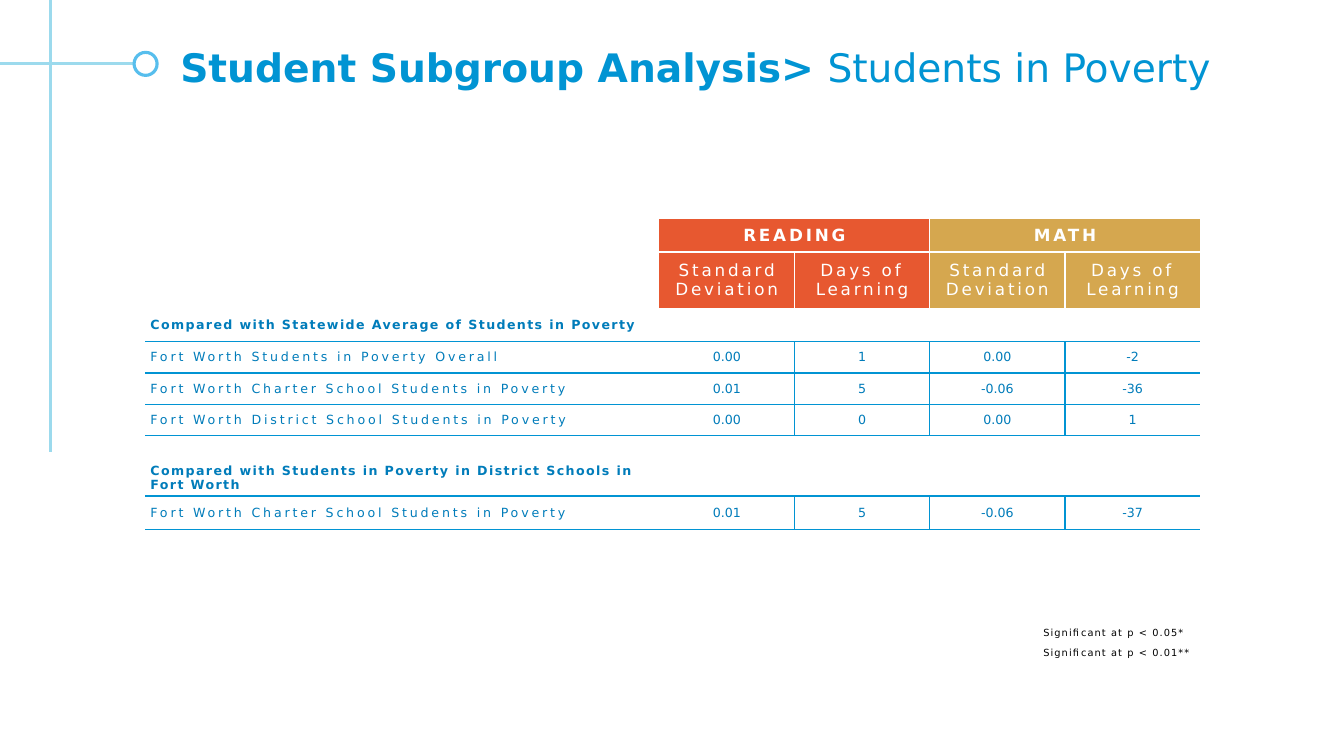
import pptx
import pptx.dml.color
import pptx.enum.shapes
import pptx.enum.text
import pptx.oxml
import pptx.oxml.ns
import pptx.util

Cm, Pt = pptx.util.Cm, pptx.util.Pt
rgb = pptx.dml.color.RGBColor.from_string
ALIGN = pptx.enum.text.PP_ALIGN
ANCHOR = pptx.enum.text.MSO_ANCHOR
NS = pptx.oxml.ns.nsdecls("a")
BLUE, TEXT_BLUE, WHITE = "0194D3", "007CBA", "FFFFFF"
RED, GOLD = "E75830", "D5A74F"


def add_run(p, text, size, color, bold=False, spacing=0):
    r = p.add_run()
    r.text = text
    style = {"name": "DejaVu Sans", "size": Pt(size), "bold": bold}
    for name, value in style.items():
        setattr(r.font, name, value)
    r.font.color.rgb = rgb(color)
    r._r.get_or_add_rPr().set("spc", str(int(spacing * 100)))


def set_cell(cell, text, sides, line, fill=None, align=ALIGN.LEFT,
             anchor=ANCHOR.MIDDLE, margins=(0.13, 0.08), **font):
    """Write text, borders on the given sides (of "LRTB") and fill of a cell."""
    side, edge = (Cm(m) for m in margins)
    layout = {"margin_left": side, "margin_right": side, "margin_top": edge,
              "margin_bottom": edge, "vertical_anchor": anchor}
    for name, value in layout.items():
        setattr(cell, name, value)
    for s in sides:
        cell._tc.get_or_add_tcPr().append(pptx.oxml.parse_xml(
            f'<a:ln{s} {NS} w="12700"><a:solidFill><a:srgbClr val="{line}"/>'
            f'</a:solidFill></a:ln{s}>'))
    if fill:
        cell.fill.solid()
        cell.fill.fore_color.rgb = rgb(fill)
    else:
        cell.fill.background()
    tf = cell.text_frame
    for i, part in enumerate(text.split("\n")):
        p = tf.add_paragraph() if i else tf.paragraphs[0]
        p.alignment = align
        if part:
            add_run(p, part, **font)
        else:
            p._p.append(pptx.oxml.parse_xml(f'<a:endParaRPr {NS} sz="400"/>'))


prs = pptx.Presentation()
prs.slide_width, prs.slide_height = Cm(33.87), Cm(19.05)
s = prs.slides.add_slide(prs.slide_layouts[1])

# Corner rules and ring
for x1, y1, x2, y2 in [(1.27, 0, 1.27, 11.4), (3.38, 1.61, 0, 1.61)]:
    rule = s.shapes.add_connector(
        pptx.enum.shapes.MSO_CONNECTOR.STRAIGHT, Cm(x1), Cm(y1), Cm(x2), Cm(y2))
    rule.line.color.rgb = rgb("9CDAED")
    rule.line.width = Pt(2.25)
    rule._element.spPr.append(pptx.oxml.parse_xml(f"<a:effectLst {NS}/>"))
ring = s.shapes.add_shape(pptx.enum.shapes.MSO_SHAPE.OVAL,
                          Cm(3.38), Cm(1.32), Cm(0.58), Cm(0.58))
ring.shadow.inherit = False
ring.fill.solid()
ring.fill.fore_color.rgb = rgb(WHITE)
ring.line.color.rgb = rgb("57BEED")
ring.line.width = Pt(2.25)

# Title and significance notes
title, notes = s.placeholders
for sp, box, anchor in [(title, (4.29, 0.97, 28.8, 1.42), ANCHOR.MIDDLE),
                        (notes, (26.04, 15.67, 4.65, 1.42), ANCHOR.TOP)]:
    for name, value in zip(("left", "top", "width", "height"), box):
        setattr(sp, name, Cm(value))
    frame = {"word_wrap": True, "vertical_anchor": anchor,
             "auto_size": pptx.enum.text.MSO_AUTO_SIZE.NONE}
    for name, value in frame.items():
        setattr(sp.text_frame, name, value)

p = title.text_frame.paragraphs[0]
p.alignment = ALIGN.LEFT
add_run(p, "Student Subgroup Analysis> ", 28, BLUE, bold=True)
add_run(p, "Students in Poverty", 28, BLUE)

tf = notes.text_frame
for i, text in enumerate(["Significant at p < 0.05*", "Significant at p < 0.01**"]):
    p = tf.add_paragraph() if i else tf.paragraphs[0]
    pPr = p._p.get_or_add_pPr()
    pPr.set("marL", str(Cm(0.64)))
    pPr.set("indent", str(-Cm(0.64)))
    pPr.append(pptx.oxml.parse_xml(f"<a:buNone {NS}/>"))
    p.space_before, p.space_after = Pt(0), Pt(6)
    add_run(p, text, 7, "000000", spacing=0.8)

# Results table
widths = [12.95] + [3.41] * 4
heights = [0.84, 1.42, 0.84, 0.79, 0.79, 0.79, 0.5, 1.02, 0.84, 0.84]
table = s.shapes.add_table(len(heights), len(widths), Cm(3.66), Cm(5.51),
                           Cm(sum(widths)), Cm(sum(heights))).table
table.first_row = table.horz_banding = False
table._tbl.tblPr.find(pptx.oxml.ns.qn("a:tableStyleId")).text = \
    "{2D5ABB26-0587-4C30-8999-92F81FD0307C}"
for col, width in zip(table.columns, widths):
    col.width = Cm(width)
for row, height in zip(table.rows, heights):
    row.height = Cm(height)

headers = [["", "READING", "", "MATH", ""],
           [""] + ["Standard\nDeviation", "Days of Learning"] * 2]
header_sides = [["", "RB", "RB", "LB", "LB"], ["", "TR", "LTR", "LTR", "LT"]]
for r, (texts, sides) in enumerate(zip(headers, header_sides)):
    for c, fill in enumerate([None, RED, RED, GOLD, GOLD]):
        set_cell(table.cell(r, c), texts[c], sides[c], WHITE, fill, ALIGN.CENTER,
                 size=12, color=WHITE, bold=r == 0, spacing=2)

body = [
    ["Compared with Statewide Average of Students in Poverty"],
    ["Fort Worth Students in Poverty Overall", "0.00", "1", "0.00", "-2"],
    ["Fort Worth Charter School Students in Poverty", "0.01", "5", "-0.06", "-36"],
    ["Fort Worth District School Students in Poverty", "0.00", "0", "0.00", "1"],
    [],
    ["Compared with Students in Poverty in District Schools in Fort Worth"],
    ["Fort Worth Charter School Students in Poverty", "0.01", "5", "-0.06", "-37"],
    [],
]
data_sides = ["TB", "RTB", "LRTB", "LRTB", "LTB"]
for r, texts in enumerate(body, start=len(headers)):
    section = len(texts) == 1
    for c in range(len(widths)):
        sides = data_sides[c] if len(texts) > 1 else "B" * len(texts)
        set_cell(table.cell(r, c), texts[c] if c < len(texts) else "", sides, BLUE,
                 align=ALIGN.CENTER if c else ALIGN.LEFT,
                 anchor=ANCHOR.BOTTOM if r == 7 else ANCHOR.MIDDLE,
                 margins=(0.03, 0.01) if c else (0.13, 0.08),
                 size=9, color=TEXT_BLUE, bold=section,
                 spacing=0 if c else 1 if section else 2)
    if section:
        table.cell(r, 1).merge(table.cell(r, 4))

table.cell(0, 0).merge(table.cell(1, 0))
table.cell(0, 1).merge(table.cell(0, 2))
table.cell(0, 3).merge(table.cell(0, 4))

prs.save("out.pptx")
